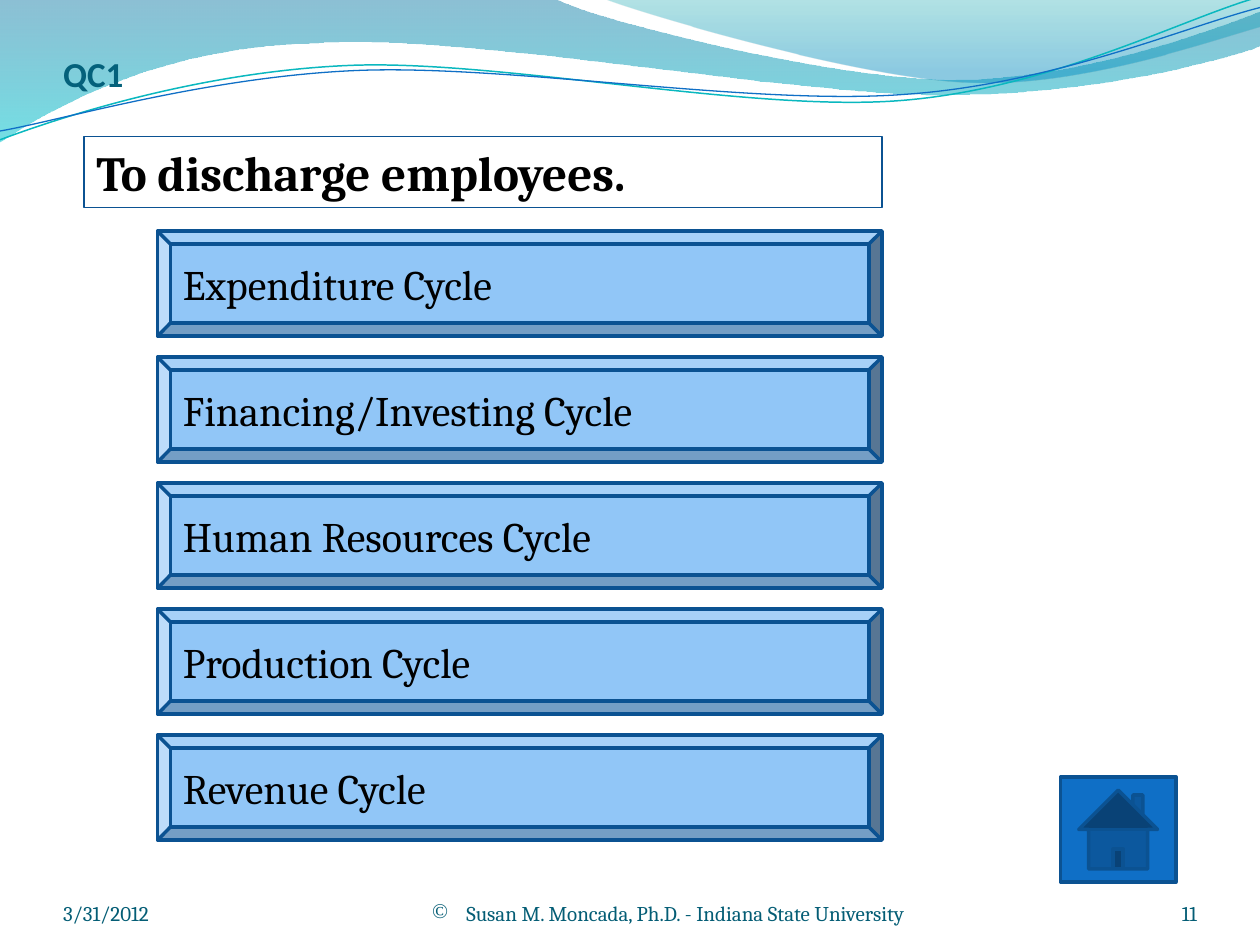
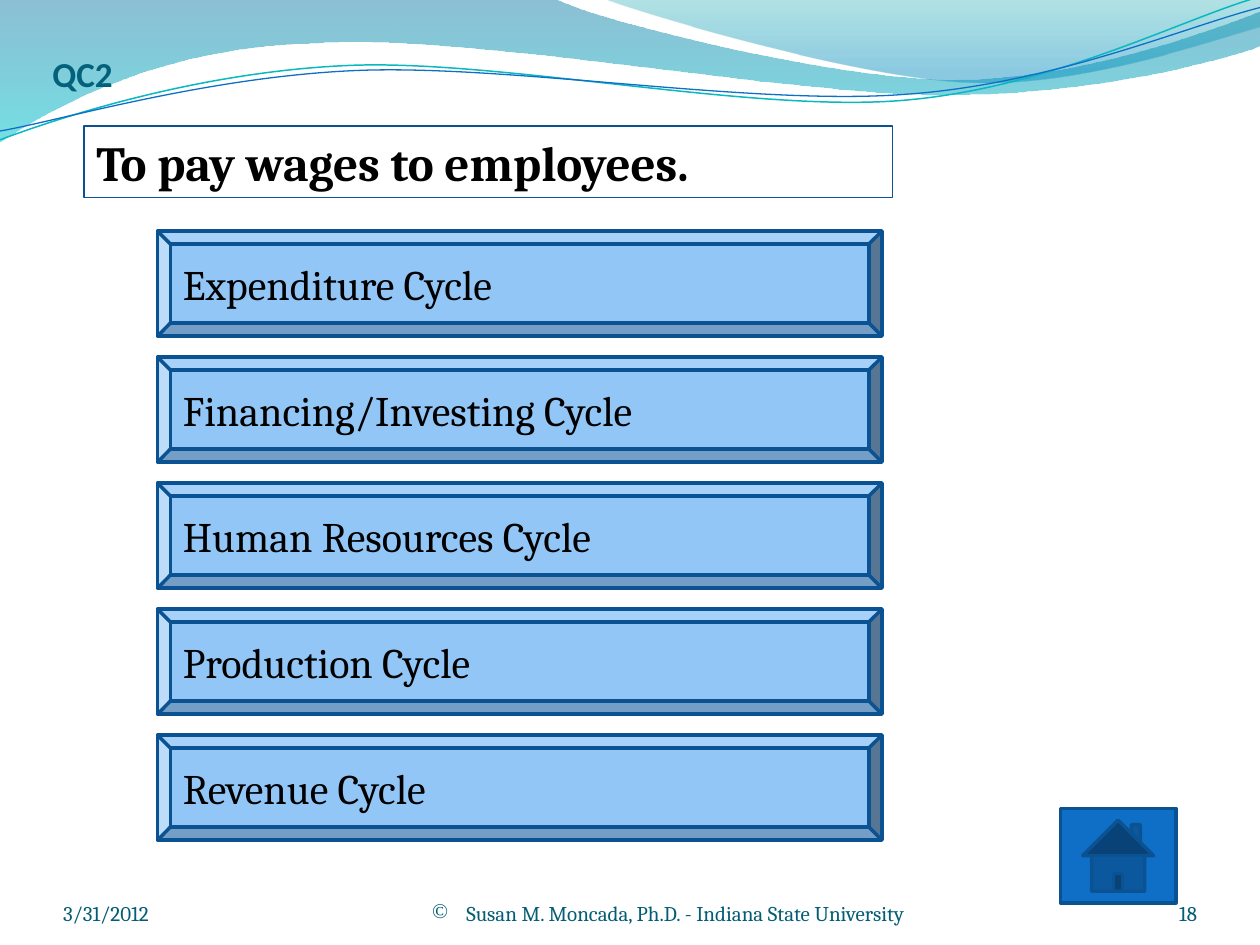
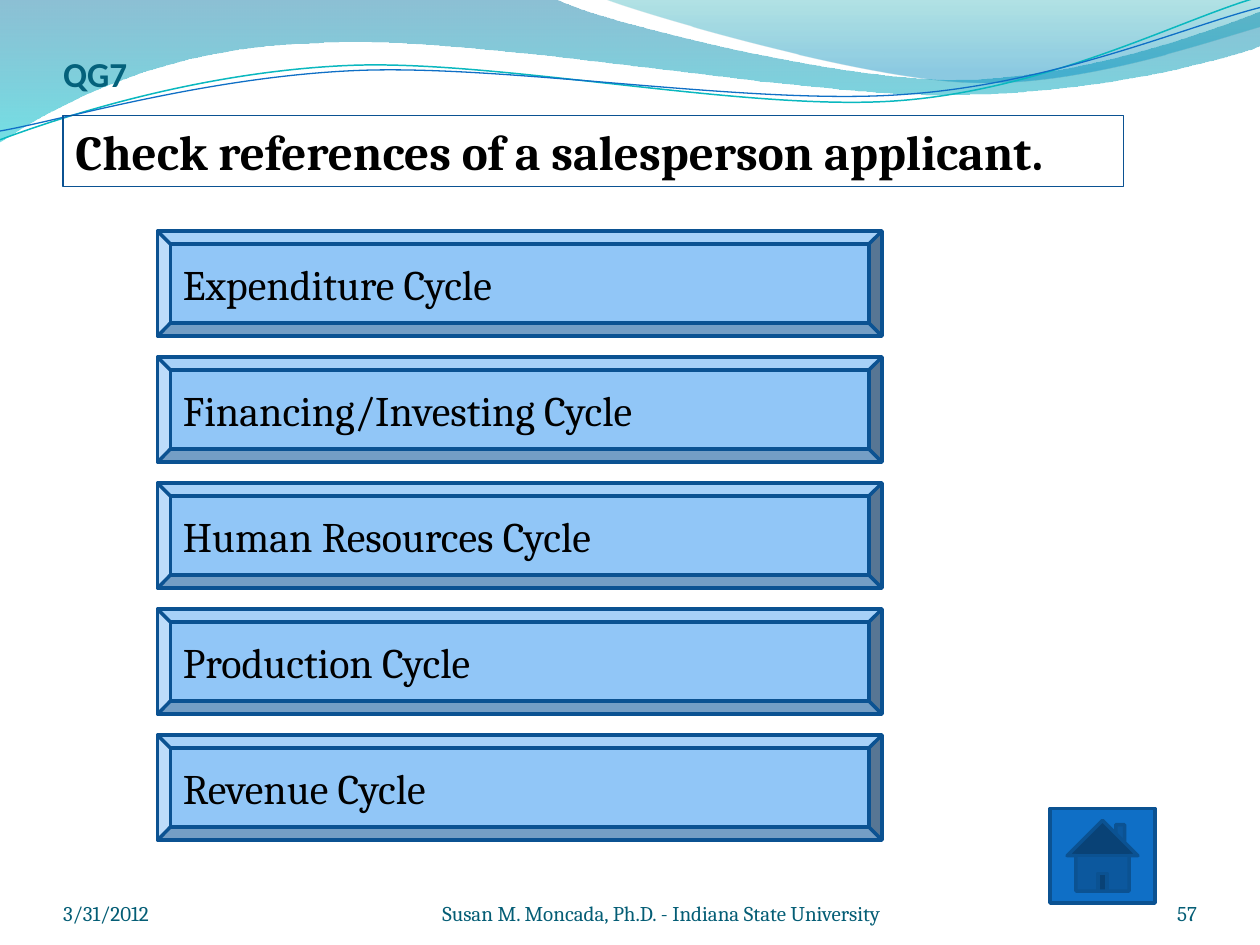
from dataclasses import dataclass
from typing import Optional

from lxml.etree import SubElement
from pptx import Presentation
from pptx.dml.color import RGBColor as RGB
from pptx.enum.shapes import MSO_SHAPE as SHAPE
from pptx.enum.text import MSO_ANCHOR as ANCHOR, MSO_AUTO_SIZE as AUTO, PP_ALIGN as ALIGN
from pptx.oxml.ns import qn
from pptx.oxml.xmlchemy import OxmlElement
from pptx.util import Inches, Pt

# Slide size, layout grid and the finer unit used by the waves
WIDTH, HEIGHT = Inches(10), Inches(7.5)
COL, ROW = WIDTH / 120, HEIGHT / 90
WAVE_UNIT = WIDTH / 1000


@dataclass(frozen=True)
class Font:
    name: str
    size: float
    color: str
    bold: bool = False


@dataclass(frozen=True)
class Theme:
    title: Font = Font("Calibri", 20, "04617B", True)
    question: Font = Font("Cambria", 28, "000000", True)
    answer: Font = Font("Cambria", 24, "000000")
    footer: Font = Font("Cambria", 12, "045D75")
    button: str = "91C6F7"
    home: str = "0F6FC6"
    outline: str = "0B5292"
    thin: float = 0.75
    thick: float = 2


@dataclass(frozen=True)
class Box:
    """A place on the grid, in columns and rows."""
    col: float
    row: float
    cols: float
    rows: float

    def emu(self) -> tuple[int, ...]:
        return (round(self.col * COL), round(self.row * ROW),
                round(self.cols * COL), round(self.rows * ROW))


@dataclass(frozen=True)
class Stop:
    position: float
    color: str
    opacity: int


@dataclass(frozen=True)
class Wave:
    """An outline: each step holds one point (line) or three (curve)."""
    start: tuple[int, int]
    steps: tuple
    gradient: tuple[Stop, ...] = ()
    line: str = ""
    width: float = 0


@dataclass(frozen=True)
class Quiz:
    code: str
    question: str
    number: str
    title_box: Box
    question_box: Box
    home_box: Box
    footer_cols: float = 59
    footer_bullet: Optional[str] = "©"


THEME = Theme()
DATE = "3/31/2012"
AUTHOR = " Susan M. Moncada, Ph.D. - Indiana State University "
CYCLES = ("Expenditure", "Financing/Investing", "Human Resources", "Production", "Revenue")
FIRST_ANSWER, ANSWER_PITCH = Box(15, 22, 69, 10), 12
FOOTER_ROW, FOOTER_ROWS = 83.4, 4.8

WAVES = (
    Wave((0, 0), (
        ((440, -1),),
        ((476, 17), (664, 63), (758, 63)),
        ((853, 63), (958, 26), (1000, 9)),
        ((1001, 36),),
        ((983, 44), (870, 76), (746, 75)),
        ((622, 75), (382, 28), (257, 34)),
        ((129, 36), (46, 83), (-1, 113)),
    ), gradient=(Stop(0, "0074A1", 45), Stop(1, "00C6CF", 55))),
    Wave((479, -1), (
        ((509, 11), (682, 62), (769, 65)),
        ((856, 69), (961, 32), (1000, 21)),
        ((1000, 0),),
    ), gradient=(Stop(0, "00A1A9", 30), Stop(0.8, "008BBF", 45))),
    Wave((0, 111), (
        ((48, 93), (158, 57), (277, 52)),
        ((395, 47), (593, 89), (713, 80)),
        ((833, 71), (938, 15), (998, -2)),
    ), line="0AB8BF", width=0.85),
    Wave((0, 104), (
        ((47, 96), (164, 61), (283, 56)),
        ((403, 51), (597, 84), (717, 75)),
        ((836, 67), (941, 21), (1000, 6)),
    ), line="0F6FC6", width=0.75),
)

QUIZZES = (
    Quiz("QC1", "To discharge employees.", "11",
         Box(6, 4, 10, 5), Box(8, 13, 76, 6.8), Box(101, 74, 11, 10)),
    Quiz("QC2", "To pay wages to employees.", "18",
         Box(5, 3, 7, 6), Box(8, 12, 77, 6.8), Box(101, 77, 11, 9)),
    Quiz("QG7", "Check references of a salesperson applicant.", "57",
         Box(6, 3.6, 15, 5.4), Box(6, 11, 101, 6.8), Box(100, 77, 10, 9),
         footer_cols=56, footer_bullet=None),
)


# Waves
def bend(sp, steps: tuple) -> None:
    """Turn each run of three segments that stands for a curve into a Bézier."""
    path = sp.element.find(".//" + qn("a:path"))
    segments = iter(path.findall(qn("a:lnTo")))
    for step in steps:
        group = [next(segments) for _ in step]
        if len(group) == 3:
            curve = OxmlElement("a:cubicBezTo")
            group[0].addprevious(curve)
            for segment in group:
                curve.append(segment[0])
                path.remove(segment)


def fill_gradient(sp, stops: tuple[Stop, ...]) -> None:
    sp.fill.gradient()
    sp.fill.gradient_angle = 270
    for target, stop in zip(sp.fill.gradient_stops, stops):
        target.position = stop.position
        target.color.rgb = RGB.from_string(stop.color)
    for color, stop in zip(sp.element.iter(qn("a:srgbClr")), stops):
        SubElement(color, qn("a:alpha")).set("val", str(stop.opacity * 1000))


def draw_wave(slide, wave: Wave):
    builder = slide.shapes.build_freeform(*wave.start, scale=WAVE_UNIT)
    points = [point for step in wave.steps for point in step]
    builder.add_line_segments(points, close=bool(wave.gradient))
    sp = builder.convert_to_shape()
    sp.shadow.inherit = False
    bend(sp, wave.steps)
    if wave.gradient:
        fill_gradient(sp, wave.gradient)
        sp.line.fill.background()
    else:
        sp.fill.background()
        set_line(sp, wave.line, wave.width)
    return sp


# Shapes and text
def set_line(sp, color: str, width: float) -> None:
    sp.line.color.rgb = RGB.from_string(color)
    sp.line.width = Pt(width)


def write(sp, text: str, font: Font, anchor: ANCHOR, align: ALIGN = ALIGN.LEFT) -> None:
    tf = sp.text_frame
    tf.word_wrap = True
    tf.vertical_anchor = anchor
    p = tf.paragraphs[0]
    p.text = text
    p.alignment = align
    p.font.name = font.name
    p.font.size = Pt(font.size)
    p.font.bold = font.bold
    p.font.color.rgb = RGB.from_string(font.color)


def add_label(slide, box: Box, text: str, font: Font,
              align: ALIGN = ALIGN.LEFT, top: float = 0):
    sp = slide.shapes.add_textbox(*box.emu())
    write(sp, text, font, ANCHOR.BOTTOM, align)
    tf = sp.text_frame
    tf.margin_left = tf.margin_right = tf.margin_bottom = 0
    tf.margin_top = round(top * ROW)
    return sp


def add_panel(slide, kind: SHAPE, box: Box, fill: Optional[str], width: float):
    sp = slide.shapes.add_shape(kind, *box.emu())
    sp.shadow.inherit = False
    if fill:
        sp.fill.solid()
        sp.fill.fore_color.rgb = RGB.from_string(fill)
    else:
        sp.fill.background()
    set_line(sp, THEME.outline, width)
    return sp


def add_footer(slide, quiz: Quiz) -> None:
    def part(col: float, cols: float, text: str, align: ALIGN):
        box = Box(col, FOOTER_ROW, cols, FOOTER_ROWS)
        return add_label(slide, box, text, THEME.footer, align)

    part(6, 28, DATE, ALIGN.LEFT)
    author = part(35, quiz.footer_cols, AUTHOR, ALIGN.CENTER)
    part(104, 10, quiz.number, ALIGN.RIGHT)
    if quiz.footer_bullet:
        bullet = OxmlElement("a:buChar")
        bullet.set("char", quiz.footer_bullet)
        author.element.find(".//" + qn("a:pPr")).insert(0, bullet)


def add_quiz(slide, quiz: Quiz) -> None:
    add_label(slide, quiz.title_box, quiz.code, THEME.title, top=0.6)
    add_footer(slide, quiz)

    question = add_panel(slide, SHAPE.RECTANGLE, quiz.question_box, None, THEME.thin)
    write(question, quiz.question, THEME.question, ANCHOR.TOP)
    question.text_frame.auto_size = AUTO.SHAPE_TO_FIT_TEXT

    add_panel(slide, SHAPE.ACTION_BUTTON_HOME, quiz.home_box, THEME.home, THEME.thick)

    first = FIRST_ANSWER
    for i, cycle in enumerate(CYCLES):
        box = Box(first.col, first.row + i * ANSWER_PITCH, first.cols, first.rows)
        answer = add_panel(slide, SHAPE.BEVEL, box, THEME.button, THEME.thick)
        write(answer, f"{cycle} Cycle", THEME.answer, ANCHOR.MIDDLE)


def main() -> None:
    prs = Presentation()
    prs.slide_width, prs.slide_height = WIDTH, HEIGHT
    blank = prs.slide_layouts[6]
    slides = [prs.slides.add_slide(blank) for _ in QUIZZES]

    # The waves are shared, so they are moved to the layout
    for wave in WAVES:
        blank.shapes.element.append(draw_wave(slides[0], wave).element)

    for slide, quiz in zip(slides, QUIZZES):
        add_quiz(slide, quiz)
    prs.save("out.pptx")


if __name__ == "__main__":
    main()
